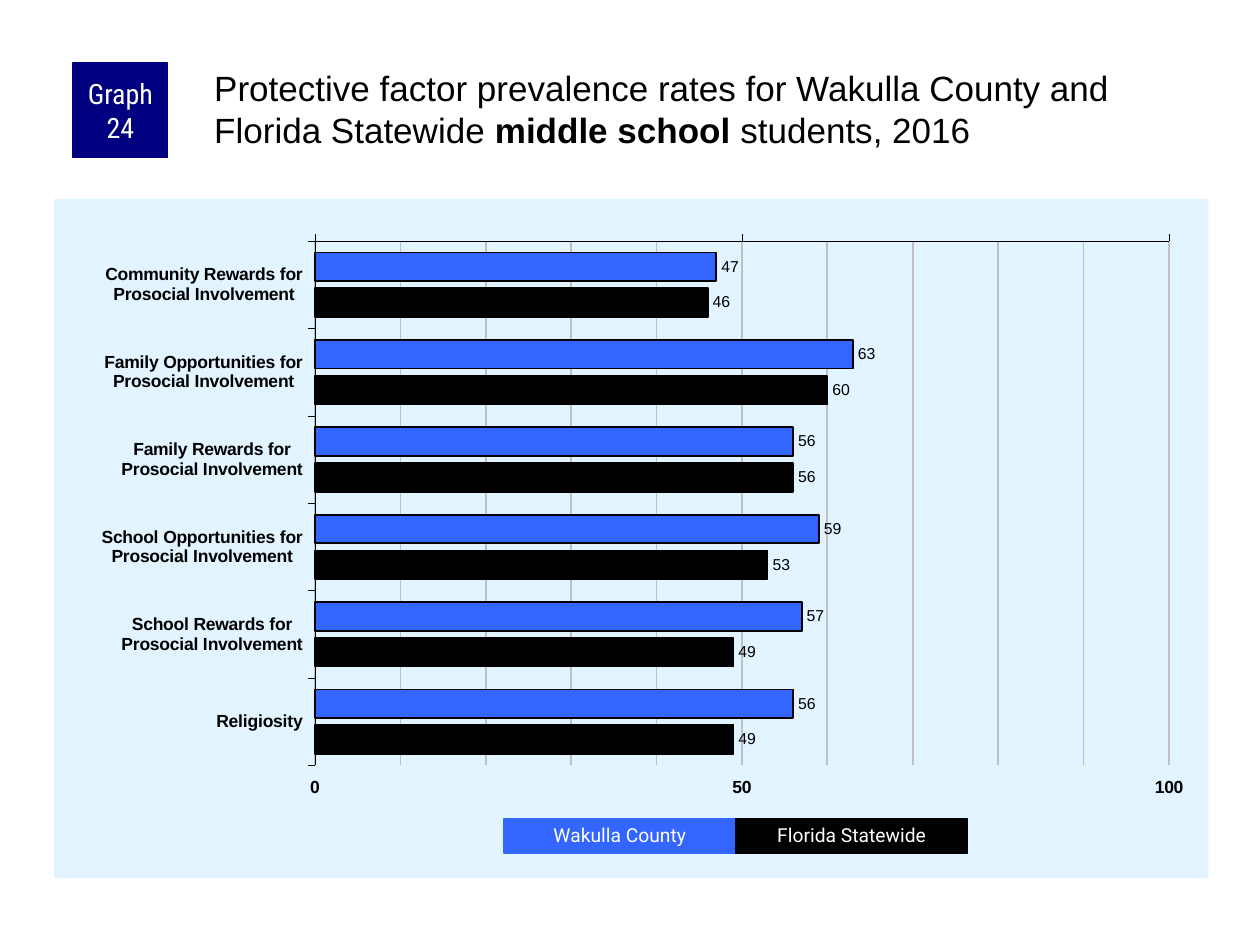
from copy import deepcopy
from dataclasses import dataclass

from lxml.etree import SubElement
from pptx import Presentation
from pptx.chart.data import CategoryChartData
from pptx.dml.color import RGBColor
from pptx.enum.chart import XL_CHART_TYPE, XL_LABEL_POSITION, XL_TICK_LABEL_POSITION, XL_TICK_MARK
from pptx.enum.shapes import MSO_SHAPE
from pptx.enum.text import MSO_ANCHOR, PP_ALIGN
from pptx.oxml import parse_xml
from pptx.oxml.ns import nsdecls, qn
from pptx.util import Inches, Pt

BLUE, BLACK, WHITE, NAVY = "3366FF", "000000", "FFFFFF", "000080"
PALE, GRAY = "E1F4FF", "C0C0C0"


@dataclass
class Box:
    text: str
    left: float
    top: float
    width: float
    height: float
    fill: str
    font: str
    size: float
    space: float = 1.0
    inset: float = 0.05


@dataclass
class Bars:
    name: str
    color: str
    vals: tuple


BARS = [
    Bars("Wakulla County", BLUE, (47, 63, 56, 59, 57, 56)),
    Bars("Florida Statewide", BLACK, (46, 60, 56, 53, 49, 49)),
]
CATS = [
    f"{name} for\nProsocial Involvement"
    for name in ("Community Rewards", "Family Opportunities", "Family Rewards",
                 "School Opportunities", "School Rewards")
] + ["Religiosity"]


def paint(part, color: str) -> None:
    """Give a fill or a line one solid colour."""
    fill = getattr(part, "fill", part)
    fill.solid()
    fill.fore_color.rgb = RGBColor.from_string(color)


def style(font, size: float, color: str = BLACK, name: str = "Arial", bold: bool = False) -> None:
    font.size, font.name, font.bold = Pt(size), name, bold
    font.color.rgb = RGBColor.from_string(color)


def write(para, text: str, **fmt) -> None:
    run = para.add_run()
    run.text = text
    style(run.font, **fmt)


def place(shape, left: float, top: float, width: float, height: float) -> None:
    shape.left, shape.top = Inches(left), Inches(top)
    shape.width, shape.height = Inches(width), Inches(height)


def add_box(slide, box: Box) -> None:
    shape = slide.shapes.add_shape(
        MSO_SHAPE.RECTANGLE, Inches(box.left), Inches(box.top),
        Inches(box.width), Inches(box.height))
    shape.shadow.inherit = False
    paint(shape, box.fill)
    paint(shape.line, box.fill)
    shape.line.width = Pt(0.75)
    frame = shape.text_frame
    frame.word_wrap = True
    frame.vertical_anchor = MSO_ANCHOR.MIDDLE
    frame.margin_left = frame.margin_right = Inches(box.inset)
    frame.margin_top = frame.margin_bottom = 0
    para = frame.paragraphs[0]
    para.alignment, para.line_spacing = PP_ALIGN.CENTER, box.space
    write(para, box.text, size=box.size, color=WHITE, name=box.font)


def add_title(slide) -> None:
    title = slide.shapes.title
    place(title, 1.67, 0.5, 7.92, 0.83)
    frame = title.text_frame
    frame.word_wrap = True
    frame.vertical_anchor = MSO_ANCHOR.TOP
    frame.margin_left = frame.margin_top = Inches(0.03)
    frame.margin_right = frame.margin_bottom = 0
    para = frame.paragraphs[0]
    para.alignment = PP_ALIGN.LEFT
    write(para, "Protective factor prevalence rates for Wakulla County and Florida Statewide ", size=20)
    write(para, "middle school ", size=20, bold=True)
    write(para, "students, 2016", size=20)


def set_axis(axis) -> None:
    axis.major_tick_mark = XL_TICK_MARK.OUTSIDE
    axis.minor_tick_mark = XL_TICK_MARK.NONE
    style(axis.tick_labels.font, 10, bold=True)
    paint(axis.format.line, BLACK)
    axis.format.line.width = Pt(0.25)


def set_grid(axis) -> None:
    """Draw major and minor gridlines alike."""
    axis.has_major_gridlines = axis.has_minor_gridlines = True
    line = axis.major_gridlines.format.line
    paint(line, GRAY)
    line.width = Pt(1)
    major, minor = (axis._element.find(qn(f"c:{kind}Gridlines")) for kind in ("major", "minor"))
    minor.append(deepcopy(major.find(qn("c:spPr"))))


def set_plot(chart, x: float, y: float, w: float, h: float) -> None:
    """Fix the inner plot area and the chart background."""
    area = chart._chartSpace.chart.plotArea
    for old in area.findall(qn("c:layout")):
        area.remove(old)
    layout = parse_xml(f"<c:layout {nsdecls('c')}/>")
    area.insert(0, layout)
    manual = SubElement(layout, qn("c:manualLayout"))
    parts = dict(layoutTarget="inner", xMode="edge", yMode="edge", x=x, y=y, w=w, h=h)
    for tag, val in parts.items():
        SubElement(manual, qn(f"c:{tag}")).set("val", str(val))
    chart._chartSpace.chart.addnext(parse_xml(
        f"<c:spPr {nsdecls('c', 'a')}><a:solidFill><a:srgbClr val='{PALE}'/>"
        "</a:solidFill><a:ln><a:noFill/></a:ln></c:spPr>"))


def add_bars(slide) -> None:
    data = CategoryChartData()
    data.categories = CATS
    for bars in BARS:
        data.add_series(bars.name, bars.vals)
    chart = slide.shapes.add_chart(
        XL_CHART_TYPE.BAR_CLUSTERED, Inches(0.43), Inches(1.58),
        Inches(9.16), Inches(5.39), data).chart
    chart.has_legend = chart.has_title = False
    style(chart.font, 11.8)
    set_plot(chart, 0.226, 0.062, 0.74, 0.772)

    # Axes: first category on top, scale at the bottom
    cat, val = chart.category_axis, chart.value_axis
    for axis in (cat, val):
        set_axis(axis)
    cat.reverse_order = True
    cat.has_major_gridlines = False
    val.tick_label_position = XL_TICK_LABEL_POSITION.HIGH
    val.minimum_scale, val.maximum_scale = 0, 100
    val.major_unit, val.minor_unit = 50, 10
    set_grid(val)

    # Bars and their values
    plot = chart.plots[0]
    plot.gap_width, plot.overlap, plot.vary_by_categories = 80, -25, False
    for series, bars in zip(plot.series, BARS):
        paint(series.format, bars.color)
        paint(series.format.line, BLACK)
        series.format.line.width = Pt(1)
        labels = series.data_labels
        labels.show_value = True
        labels.position = XL_LABEL_POSITION.OUTSIDE_END
        style(labels.font, 9)


def main() -> None:
    deck = Presentation()
    deck.slide_width, deck.slide_height = Inches(10), Inches(7.5)
    slide = deck.slides.add_slide(deck.slide_layouts[5])
    add_bars(slide)
    add_title(slide)
    add_box(slide, Box("Graph 24", 0.58, 0.5, 0.75, 0.75, NAVY, "Roboto Condensed", 16))
    # Legend
    for i, bars in enumerate(BARS):
        add_box(slide, Box(bars.name, 4 + 1.84 * i, 6.5, 1.84, 0.27,
                           bars.color, "Roboto", 11, space=0.9, inset=0.1))
    deck.save("out.pptx")


if __name__ == "__main__":
    main()
